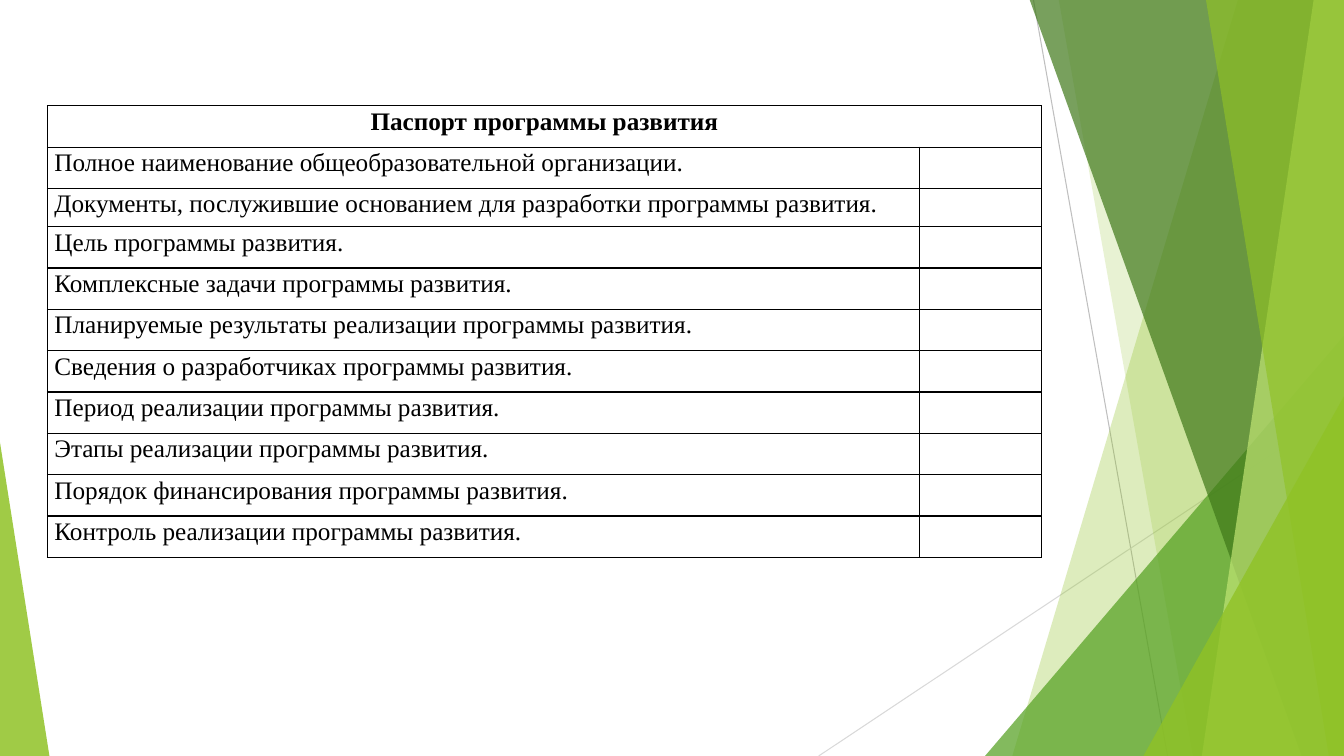
from lxml import etree
from pptx import Presentation
from pptx.dml.color import RGBColor
from pptx.enum import shapes, text
from pptx.oxml.ns import qn
from pptx.util import Pt

PX = 9144  # EMU; 100 px to the inch
WIDTH, HEIGHT = 1333, 750

HEADING = "Паспорт программы развития"
ITEMS = [
    "Полное наименование общеобразовательной организации.",
    "Документы, послужившие основанием для разработки программы развития.",
    "Цель программы развития.",
    "Комплексные задачи программы развития.",
    "Планируемые результаты реализации программы развития.",
    "Сведения о разработчиках программы развития.",
    "Период реализации программы развития.",
    "Этапы реализации программы развития.",
    "Порядок финансирования программы развития.",
    "Контроль реализации программы развития.",
]
TABLE_LEFT, TABLE_TOP = 47, 105
COLUMNS = [865, 121]
ROW, SHORT_ROW, SHORT_INDEX = 41, 38, 2

# start, end, colour
RAYS = [
    ((1025, 0), (1158, 750), "BFBFBF"),
    ((1333, 403), (812, 750), "D9D9D9"),
]
# Bands reach the right edge: top-left x, bottom-left x, colour, opacity %
# Triangles stand on the bottom edge: left, top, width, apex, colour, opacity %
DECOR = [
    ("band", 1228, 1004, "90C226", 30),
    ("band", 1050, 1183, "90C226", 20),
    ("triangle", 977, 333, 356, 1, "54A021", 72),
    ("band", 1021, 1291, "3F7819", 70),
    ("band", 1303, 1192, "C0E474", 70),
    ("band", 1196, 1318, "90C226", 65),
    ("triangle", 1134, 393, 199, 1, "90C226", 80),
    ("triangle", 0, 439, 49, 0, "90C226", 85),
]


def px(*lengths):
    return [round(length * PX) for length in lengths]


def rgb(value):
    return RGBColor.from_string(value)


def draw_ray(slide, start, end, colour):
    ray = slide.shapes.add_connector(shapes.MSO_CONNECTOR.STRAIGHT, *px(*start, *end))
    ray.line.color.rgb = rgb(colour)
    ray.line.width = Pt(0.75)
    etree.SubElement(ray._element.spPr, qn("a:effectLst"))


def paint(shape, colour, opacity):
    shape.shadow.inherit = False
    shape.line.fill.background()
    shape.fill.solid()
    shape.fill.fore_color.rgb = rgb(colour)
    srgb = shape._element.spPr.find(qn("a:solidFill"))[0]
    etree.SubElement(srgb, qn("a:alpha"), val=str(opacity * 1000))


def add_band(slide, top_x, bottom_x):
    outline = slide.shapes.build_freeform(top_x, -1, scale=PX)
    outline.add_line_segments([(WIDTH, -1), (WIDTH, HEIGHT), (bottom_x, HEIGHT)])
    return outline.convert_to_shape()


def add_triangle(slide, left, top, width, apex):
    triangle = slide.shapes.add_shape(
        shapes.MSO_SHAPE.ISOSCELES_TRIANGLE, *px(left, top, width, HEIGHT - top))
    triangle.adjustments[0] = apex
    return triangle


def style_cell(cell):
    cell.margin_left = cell.margin_right = px(7)[0]
    cell.margin_top = cell.margin_bottom = 0
    properties = cell._tc.get_or_add_tcPr()
    for side in "LRTB":
        border = etree.SubElement(properties, qn(f"a:ln{side}"), w=str(Pt(1)))
        fill = etree.SubElement(border, qn("a:solidFill"))
        etree.SubElement(fill, qn("a:srgbClr"), val="000000")
    cell.fill.background()


def write(cell, words, bold=False, align=text.PP_ALIGN.LEFT):
    cell.text = words
    paragraph = cell.text_frame.paragraphs[0]
    paragraph.alignment = align
    paragraph.line_spacing = 1.07
    paragraph.space_after = Pt(8)
    font = paragraph.font
    font.name, font.size, font.bold = "Times New Roman", Pt(18), bold
    font.color.rgb = rgb("000000")


def add_passport(slide):
    heights = [ROW] * (len(ITEMS) + 1)
    heights[SHORT_INDEX] = SHORT_ROW
    passport = slide.shapes.add_table(
        len(heights), len(COLUMNS),
        *px(TABLE_LEFT, TABLE_TOP, sum(COLUMNS), sum(heights))).table
    passport.first_row = passport.horz_banding = False
    for column, width in zip(passport.columns, px(*COLUMNS)):
        column.width = width
    for row, height in zip(passport.rows, px(*heights)):
        row.height = height
    for cell in passport.iter_cells():
        style_cell(cell)
    passport.cell(0, 0).merge(passport.cell(0, 1))
    write(passport.cell(0, 0), HEADING, True, text.PP_ALIGN.CENTER)
    for index, item in enumerate(ITEMS, 1):
        write(passport.cell(index, 0), item)


def main():
    deck = Presentation()
    deck.slide_width, deck.slide_height = px(WIDTH, HEIGHT)
    slide = deck.slides.add_slide(deck.slide_layouts[6])
    for ray in RAYS:
        draw_ray(slide, *ray)
    builders = {"band": add_band, "triangle": add_triangle}
    for kind, *geometry, colour, opacity in DECOR:
        paint(builders[kind](slide, *geometry), colour, opacity)
    add_passport(slide)
    deck.save("out.pptx")


if __name__ == "__main__":
    main()
